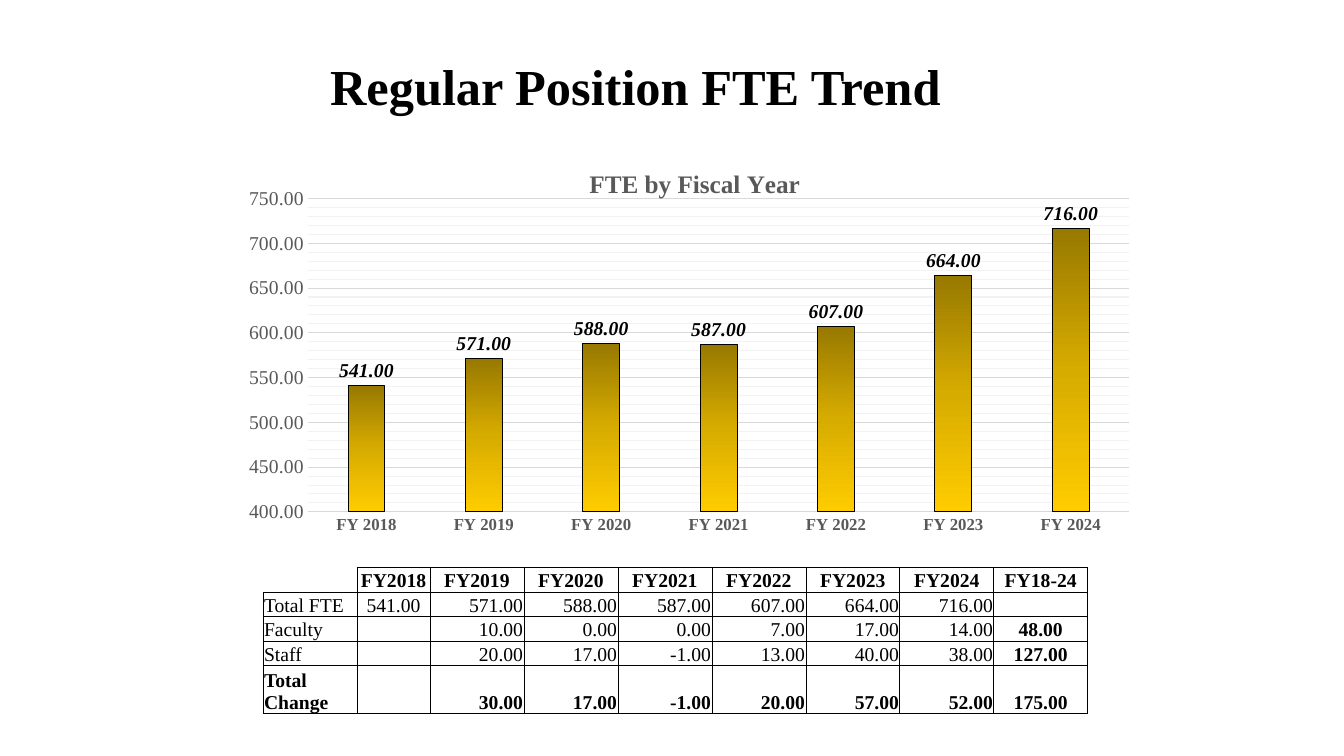
from copy import deepcopy

from pptx import Presentation
from pptx.chart.data import CategoryChartData
from pptx.dml.color import RGBColor
from pptx.enum.chart import XL_CHART_TYPE, XL_LABEL_POSITION, XL_TICK_MARK
from pptx.enum.text import MSO_ANCHOR, PP_ALIGN
from pptx.oxml import parse_xml
from pptx.oxml.ns import nsdecls, qn
from pptx.util import Pt

LEFT, MID, RIGHT = PP_ALIGN.LEFT, PP_ALIGN.CENTER, PP_ALIGN.RIGHT
BOTTOM = MSO_ANCHOR.BOTTOM
COLUMN = XL_CHART_TYPE.COLUMN_CLUSTERED
NO_TICK = XL_TICK_MARK.NONE
OUT_END = XL_LABEL_POSITION.OUTSIDE_END

FACE = "Times New Roman"
HUES = {"ink": "000000", "gray": "595959", "grid": "D9D9D9", "faint": "F2F2F2",
        "dark": "977900", "gold": "D7AC00", "light": "FFCC00"}

YEARS = range(2018, 2025)
TOTALS = (541, 571, 588, 587, 607, 664, 716)
ROWS = (
    ("", *(f"FY{y}" for y in YEARS), "FY18-24"),
    ("Total FTE", *(f"{n:.2f}" for n in TOTALS), ""),
    ("Faculty", "", "10.00", "0.00", "0.00", "7.00", "17.00", "14.00", "48.00"),
    ("Staff", "", "20.00", "17.00", "-1.00", "13.00", "40.00", "38.00", "127.00"),
    ("Total Change", "", "30.00", "17.00", "-1.00", "20.00", "57.00", "52.00", "175.00"),
)


def hue(name):
    return RGBColor.from_string(HUES[name])


def style(font, size, color="ink", bold=False, italic=False):
    font.name, font.size = FACE, Pt(size)
    font.bold, font.italic = bold, italic
    font.color.rgb = hue(color)


def write(frame, text, align=LEFT, size=14, **look):
    para = frame.paragraphs[0]
    para.alignment = align
    if text:
        run = para.add_run()
        run.text = text
        style(run.font, size, **look)
    else:
        para._p.get_or_add_endParaRPr().set("sz", str(size * 100))


def stroke(line, color, width=0.75):
    line.color.rgb = hue(color)
    line.width = Pt(width)


def ruled(tag, color, width):
    """Return a line element, for parts that have no line object."""
    return (f'<a:{tag} {nsdecls("a")} w="{Pt(width)}"><a:solidFill>'
            f'<a:srgbClr val="{HUES[color]}"/></a:solidFill></a:{tag}>')


def place(node, spot, **fracs):
    """Give a chart part a manual layout, as fractions of the chart."""
    old = node.find(qn("c:layout"))
    if old is not None:
        node.remove(old)
    inner = '<c:layoutTarget val="inner"/>' if "w" in fracs else ""
    modes = "".join(f'<c:{k}Mode val="edge"/>' for k in "xy")
    sizes = "".join(f'<c:{k} val="{v}"/>' for k, v in fracs.items())
    node.insert(spot, parse_xml(
        f'<c:layout {nsdecls("c")}><c:manualLayout>{inner}{modes}{sizes}'
        '</c:manualLayout></c:layout>'))


def head(slide, x, y, w, h):
    frame = slide.shapes.add_textbox(Pt(x), Pt(y), Pt(w), Pt(h)).text_frame
    frame.word_wrap = True
    write(frame, "Regular Position FTE Trend", MID, 36, bold=True)


def graph(slide, x, y, w, h):
    data = CategoryChartData(number_format="0.00")
    data.categories = [f"FY {year}" for year in YEARS]
    data.add_series("Series 1", TOTALS)
    chart = slide.shapes.add_chart(COLUMN, Pt(x), Pt(y), Pt(w), Pt(h), data).chart
    style(chart.font, 10)
    chart.has_legend = False

    # Title and plot area
    chart.has_title = True
    title = chart.chart_title
    write(title.text_frame, "FTE by Fiscal Year", MID, 18, color="gray", bold=True)
    place(title._element, 1, x=0.41, y=0.04)
    area = chart._chartSpace.chart.plotArea
    place(area, 0, x=0.12, y=0.12, w=0.86, h=0.72)

    # Axes
    cat, val = chart.category_axis, chart.value_axis
    for axis, size in ((cat, 12), (val, 14)):
        axis.major_tick_mark = axis.minor_tick_mark = NO_TICK
        style(axis.tick_labels.font, size, "gray", bold=axis is cat)
    stroke(cat.format.line, "grid")
    val.format.line.fill.background()
    val.minimum_scale, val.maximum_scale = 400, 750
    val.major_unit, val.minor_unit = 50, 10
    val.has_major_gridlines = val.has_minor_gridlines = True
    stroke(val.major_gridlines.format.line, "grid")
    minor = area.find(".//" + qn("c:minorGridlines"))
    minor.append(parse_xml(
        f'<c:spPr {nsdecls("c")}>{ruled("ln", "faint", 0.75)}</c:spPr>'))
    val.tick_labels.number_format = "0.00"
    val.tick_labels.number_format_is_linked = False

    # Bars with a three-stop gradient
    plot = chart.plots[0]
    plot.gap_width, plot.overlap = 219, -27
    plot.vary_by_categories = False
    bars = plot.series[0]
    bars.invert_if_negative = False
    fill = bars.format.fill
    fill.gradient()
    fill.gradient_angle = 270
    stops = bars._element.find(".//" + qn("a:gsLst"))
    stops.insert(1, deepcopy(stops[0]))
    for stop, name, pos in zip(fill.gradient_stops, ("dark", "gold", "light"), (0, 0.5, 1)):
        stop.color.rgb = hue(name)
        stop.position = pos
    stroke(bars.format.line, "ink")

    # Value labels
    plot.has_data_labels = True
    tags = plot.data_labels
    tags.show_value = True
    tags.position = OUT_END
    tags.number_format, tags.number_format_is_linked = "0.00", False
    style(tags.font, 14, bold=True, italic=True)


def edge(cell, sides):
    props = cell._tc.get_or_add_tcPr()
    for spot, side in enumerate(sides):
        props.insert(spot, parse_xml(ruled("ln" + side, "ink", 0.5)))


def grid(slide, x, y, w, h):
    last = len(ROWS[0]) - 1
    table = slide.shapes.add_table(len(ROWS), last + 1, Pt(x), Pt(y), Pt(w), Pt(h)).table
    table.first_row = table.horz_banding = False
    slim = 52
    for i, col in enumerate(table.columns):
        col.width = Pt(slim if i == 1 else (w - slim) / last)
    for i, row in enumerate(table.rows):
        row.height = Pt(h / 6 * (2 if i == len(ROWS) - 1 else 1))

    for r, row in enumerate(ROWS):
        for c, text in enumerate(row):
            cell = table.cell(r, c)
            cell.fill.background()
            cell.vertical_anchor = BOTTOM
            cell.margin_left = cell.margin_right = cell.margin_top = Pt(0.6)
            cell.margin_bottom = 0
            edge(cell, "RB" if r == c == 0 else "LRTB")
            if c == 0:
                align = LEFT
            else:
                align = MID if r == 0 or c in (1, last) else RIGHT
            bold = r in (0, len(ROWS) - 1) or c == last
            write(cell.text_frame, text, align, bold=bold)


def main():
    deck = Presentation()
    deck.slide_width, deck.slide_height = Pt(960), Pt(540)
    slide = deck.slides.add_slide(deck.slide_layouts[6])
    head(slide, 188, 36, 532, 94)
    graph(slide, 138, 104.5, 682.5, 311)
    grid(slide, 188, 405.5, 589, 103)
    deck.save("out.pptx")


if __name__ == "__main__":
    main()
